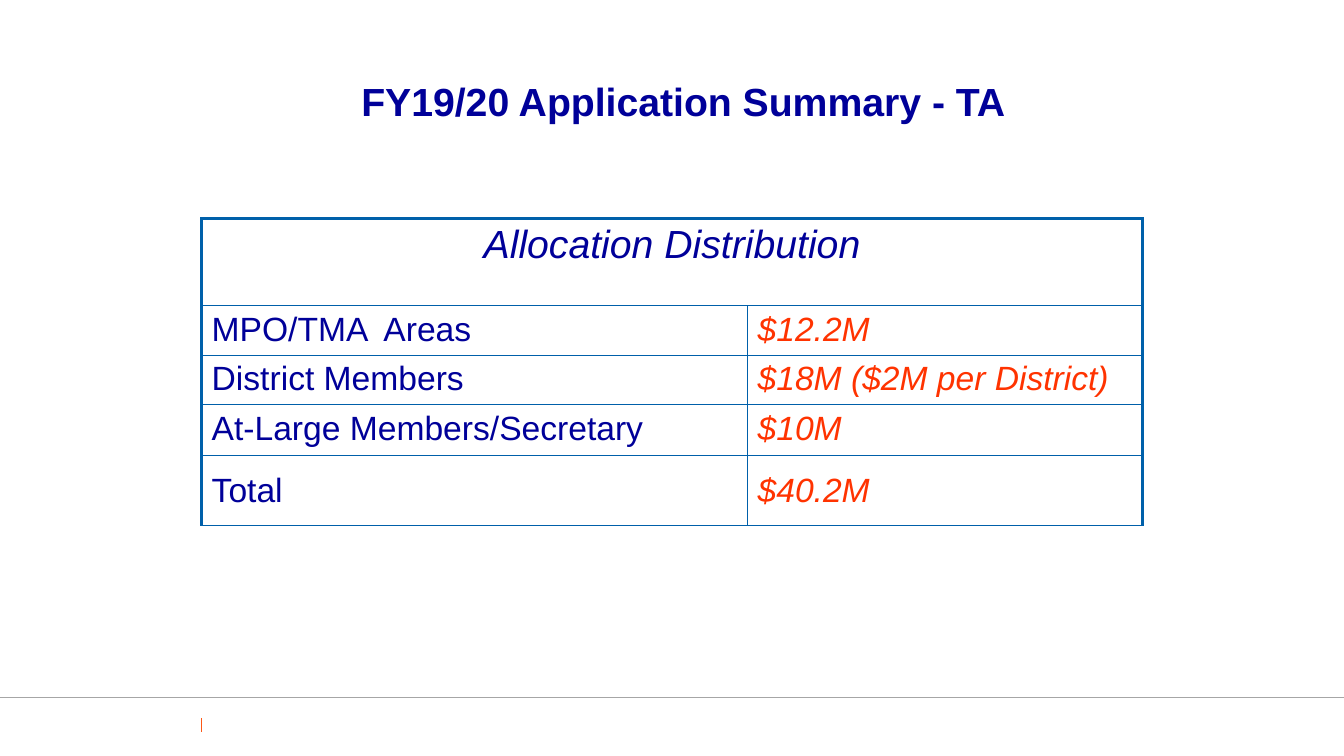
import pptx
import pptx.dml.color
import pptx.enum.shapes
import pptx.enum.text
import pptx.oxml
import pptx.oxml.ns
import pptx.util

NAVY, ORANGE_RED, BORDER_BLUE = "000099", "FF3300", "0060AA"
FOOTER_GREY, FOOTER_ORANGE = "A6A6A6", "FD5816"
THIN, THICK = 1, 2.25
CENTER = pptx.enum.text.PP_ALIGN.CENTER
LEFT = pptx.enum.text.PP_ALIGN.LEFT
MIDDLE = pptx.enum.text.MSO_ANCHOR.MIDDLE
TOP = pptx.enum.text.MSO_ANCHOR.TOP
NAMESPACE = pptx.oxml.ns.nsdecls("a")


def color(hex_string):
    return pptx.dml.color.RGBColor.from_string(hex_string)


def write_text(text_frame, text, size=24, fill=NAVY, bold=False, italic=False,
               align=LEFT):
    paragraph = text_frame.paragraphs[0]
    paragraph.alignment = align
    run = paragraph.add_run()
    run.text = text
    font = run.font
    font.name, font.size = "Arial", pptx.util.Pt(size)
    font.bold, font.italic = bold, italic
    font.color.rgb = color(fill)


class SlideBuilder:
    """Places elements on a grid of 40 columns by 45 rows."""

    def __init__(self, presentation):
        self.column = presentation.slide_width / 40
        self.row = presentation.slide_height / 45
        title_only = presentation.slide_layouts[5]
        self.slide = presentation.slides.add_slide(title_only)

    def x(self, columns):
        return round(columns * self.column)

    def y(self, rows):
        return round(rows * self.row)

    def line(self, start, end, fill, width):
        connector = self.slide.shapes.add_connector(
            pptx.enum.shapes.MSO_CONNECTOR.STRAIGHT,
            self.x(start[0]), self.y(start[1]), self.x(end[0]), self.y(end[1]))
        connector.line.color.rgb = color(fill)
        connector.line.width = pptx.util.Pt(width)
        properties = connector._element.spPr
        properties.append(pptx.oxml.parse_xml(f"<a:effectLst {NAMESPACE}/>"))

    def title(self, text, left, top, width, height):
        shape = self.slide.shapes.title
        shape.left, shape.top = self.x(left), self.y(top)
        shape.width, shape.height = self.x(width), self.y(height)
        frame = shape.text_frame
        frame.auto_size = pptx.enum.text.MSO_AUTO_SIZE.NONE
        frame.word_wrap = True
        frame.vertical_anchor = MIDDLE
        write_text(frame, text, size=28, bold=True, align=CENTER)

    def borders(self, cell, **widths):
        properties = cell._tc.get_or_add_tcPr()
        for position, side in enumerate("LRTB"):
            width = pptx.util.Pt(widths.get(side, THIN))
            properties.insert(position, pptx.oxml.parse_xml(
                f'<a:ln{side} {NAMESPACE} w="{width}">'
                f'<a:solidFill><a:srgbClr val="{BORDER_BLUE}"/></a:solidFill>'
                f'<a:prstDash val="solid"/></a:ln{side}>'))

    def table(self, heading, entries, left, top, columns, rows):
        frame = self.slide.shapes.add_table(
            len(rows), len(columns), self.x(left), self.y(top),
            self.x(sum(columns)), self.y(sum(rows)))
        table = frame.table
        table.first_row = table.horz_banding = False
        for table_column, width in zip(table.columns, columns):
            table_column.width = self.x(width)
        for table_row, height in zip(table.rows, rows):
            table_row.height = self.y(height)

        # Thick frame on the left, right and top
        for number in range(len(rows)):
            top_width = THIN if number else THICK
            for index, outer_side in enumerate("LR"):
                cell = table.cell(number, index)
                cell.fill.background()
                sides = "LR" if number == 0 else outer_side
                self.borders(cell, T=top_width, **dict.fromkeys(sides, THICK))

        # Heading across both columns
        table.cell(0, 0).merge(table.cell(0, 1))
        write_text(table.cell(0, 0).text_frame, heading, size=28, italic=True,
                   align=CENTER)

        # Labels and amounts, the total centred vertically
        for number, (label, amount) in enumerate(entries, start=1):
            label_cell, amount_cell = table.rows[number].cells
            anchor = MIDDLE if number == len(entries) else TOP
            label_cell.vertical_anchor = amount_cell.vertical_anchor = anchor
            write_text(label_cell.text_frame, label)
            write_text(amount_cell.text_frame, amount, fill=ORANGE_RED,
                       italic=True)


def main():
    presentation = pptx.Presentation()
    presentation.slide_width = pptx.util.Inches(13.33)
    presentation.slide_height = pptx.util.Inches(7.5)
    builder = SlideBuilder(presentation)

    # Footer rule and tick
    builder.line((0, 41.5), (40, 41.5), FOOTER_GREY, 0.5)
    builder.line((6, 42.75), (6, 43.6), FOOTER_ORANGE, 0.75)

    # Title
    builder.title("FY19/20 Application Summary - TA", 2, 3.5, 36.67, 5)

    # Allocation table
    entries = [
        ("MPO/TMA  Areas", "$12.2M"),
        ("District Members", "$18M ($2M per District)"),
        ("At-Large Members/Secretary", "$10M"),
        ("Total", "$40.2M"),
    ]
    builder.table("Allocation Distribution", entries, left=6, top=13,
                  columns=[16.25, 11.75], rows=[5.2, 2.95, 2.95, 3, 4.2])

    presentation.save("out.pptx")


if __name__ == "__main__":
    main()
